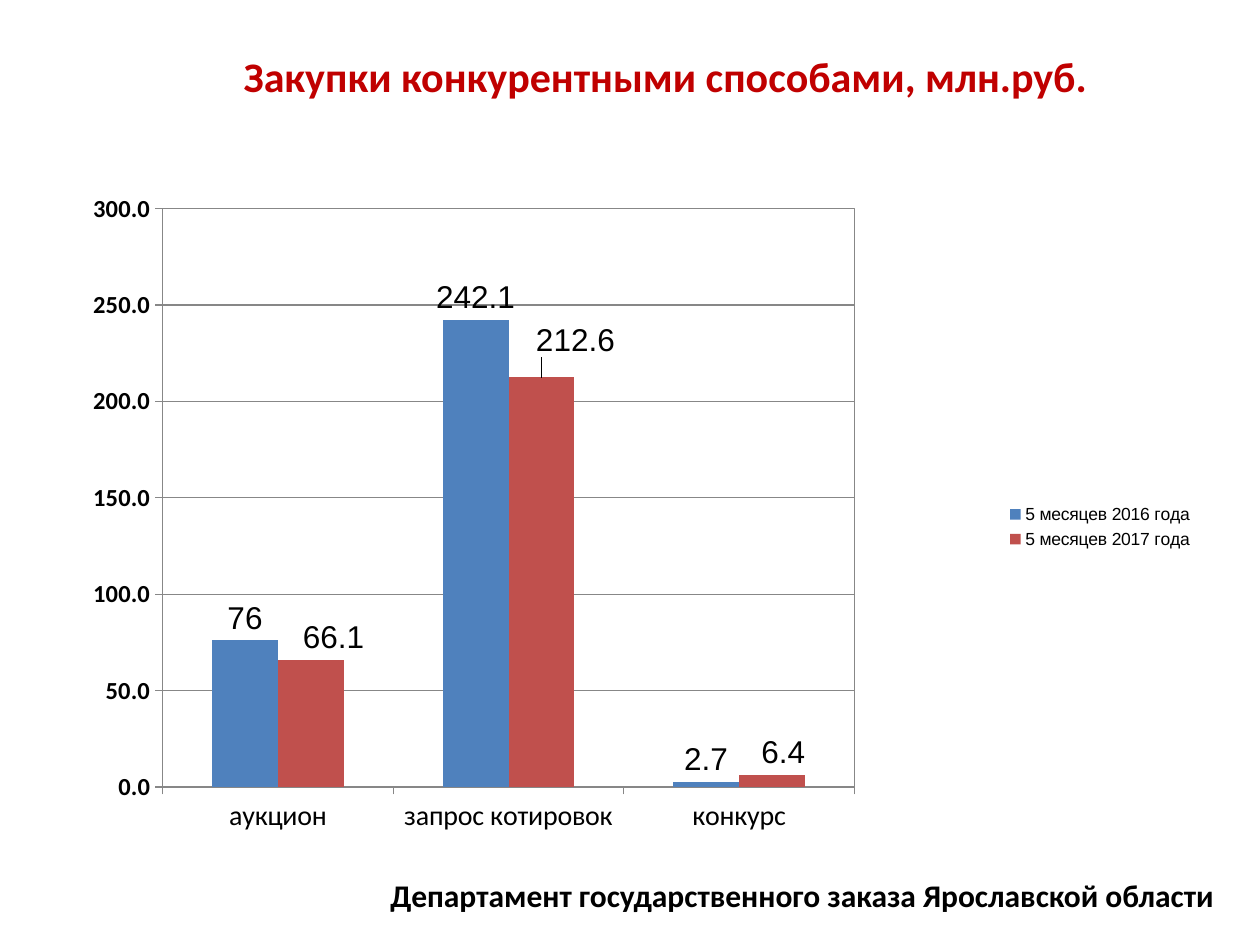
from lxml.etree import SubElement
from pptx import Presentation
from pptx.chart.data import CategoryChartData
from pptx.dml.color import RGBColor
from pptx.enum.chart import XL_CHART_TYPE, XL_LABEL_POSITION, XL_LEGEND_POSITION, XL_TICK_MARK
from pptx.enum.text import MSO_ANCHOR, MSO_AUTO_SIZE, PP_ALIGN
from pptx.oxml import parse_xml
from pptx.oxml.ns import nsdecls, qn
from pptx.util import Cm, Pt

BLACK = RGBColor(0x00, 0x00, 0x00)
DARK_RED = RGBColor(0xC0, 0x00, 0x00)
GRID_GRAY = RGBColor(0x87, 0x87, 0x87)
BLUE = RGBColor(0x4F, 0x81, 0xBD)
BRICK = RGBColor(0xC0, 0x50, 0x4D)

METHODS = ["аукцион", "запрос котировок", "конкурс"]
PERIODS = [
    ("5 месяцев 2016 года", [76, 242.1, 2.7], BLUE),
    ("5 месяцев 2017 года", [66.1, 212.6, 6.4], BRICK),
]
# Shifts of the 2017 labels, as fractions of the chart's width and height
LABEL_SHIFTS = [(0.02, 0), (0.03, -0.02), (0.01, 0)]
PLOT_BOX = {"x": 0.08, "y": 0.06, "w": 0.61, "h": 0.8}


def set_font(font, size, name="Calibri", color=BLACK, bold=False):
    font.size = Pt(size)
    font.name = name
    font.bold = bold
    font.color.rgb = color


def manual_layout(settings):
    layout = parse_xml(f"<c:layout {nsdecls('c')}><c:manualLayout/></c:layout>")
    for tag, value in settings.items():
        SubElement(layout[0], qn(f"c:{tag}")).set("val", str(value))
    return layout


def add_heading(slide, left, top, width, height):
    heading = slide.shapes.title
    heading.left, heading.top, heading.width, heading.height = left, top, width, height
    frame = heading.text_frame
    frame.text = "Закупки конкурентными способами, млн.руб."
    frame.auto_size = MSO_AUTO_SIZE.NONE
    frame.vertical_anchor = MSO_ANCHOR.MIDDLE
    paragraph = frame.paragraphs[0]
    paragraph.alignment = PP_ALIGN.CENTER
    paragraph.line_spacing = Pt(7.8)
    set_font(paragraph.runs[0].font, 24, color=DARK_RED, bold=True)


def frame_plot(chart):
    """Fix the inner plot box and outline it."""
    plot_area = chart._chartSpace.chart.plotArea
    for layout in plot_area.findall(qn("c:layout")):
        plot_area.remove(layout)
    modes = {"layoutTarget": "inner", "xMode": "edge", "yMode": "edge"}
    plot_area.insert(0, manual_layout(modes | PLOT_BOX))
    plot_area.append(parse_xml(
        f'<c:spPr {nsdecls("c", "a")}><a:noFill/><a:ln w="9525"><a:solidFill>'
        f'<a:srgbClr val="{GRID_GRAY}"/></a:solidFill></a:ln></c:spPr>'))


def style_axes(chart):
    for axis, size, bold in ((chart.category_axis, 16, False), (chart.value_axis, 14, True)):
        set_font(axis.tick_labels.font, size, bold=bold)
        axis.major_tick_mark = XL_TICK_MARK.OUTSIDE
        axis.minor_tick_mark = XL_TICK_MARK.NONE
        axis.format.line.color.rgb = GRID_GRAY
        axis.format.line.width = Pt(0.75)
    values = chart.value_axis
    values.minimum_scale, values.maximum_scale, values.major_unit = 0, 300, 50
    values.tick_labels.number_format = "#,##0.0"
    values.tick_labels.number_format_is_linked = False
    values.has_major_gridlines = True
    values.major_gridlines.format.line.color.rgb = GRID_GRAY
    values.major_gridlines.format.line.width = Pt(0.75)


def shift_labels(series):
    for index, (x, y) in enumerate(LABEL_SHIFTS):
        label = series.points[index].data_label
        set_font(label.font, 18, "Arial")
        label.position = XL_LABEL_POSITION.OUTSIDE_END
        label._dLbl.insert(1, manual_layout({"x": x, "y": y}))


def add_purchases_chart(slide, left, top, width, height):
    data = CategoryChartData()
    data.categories = METHODS
    for period, amounts, _ in PERIODS:
        data.add_series(period, amounts)
    chart = slide.shapes.add_chart(
        XL_CHART_TYPE.COLUMN_CLUSTERED, left, top, width, height, data).chart
    set_font(chart.font, 10, "Arial")
    chart.has_title = False
    chart.has_legend = True
    chart.legend.position = XL_LEGEND_POSITION.RIGHT
    chart.legend.include_in_layout = False
    plot = chart.plots[0]
    plot.gap_width = 150
    plot.overlap = 0
    plot.vary_by_categories = False
    for series, (_, _, color) in zip(plot.series, PERIODS):
        series.format.fill.solid()
        series.format.fill.fore_color.rgb = color
        labels = series.data_labels
        labels.show_value = True
        labels.position = XL_LABEL_POSITION.OUTSIDE_END
        set_font(labels.font, 18, "Arial")
    shift_labels(plot.series[1])
    style_axes(chart)
    frame_plot(chart)


def add_department(slide, left, top, width, height):
    frame = slide.shapes.add_textbox(left, top, width, height).text_frame
    frame.word_wrap = True
    frame.text = "Департамент государственного заказа Ярославской области"
    set_font(frame.paragraphs[0].runs[0].font, 18, bold=True)


def main():
    presentation = Presentation()
    presentation.slide_width, presentation.slide_height = Cm(25.4), Cm(19.05)
    slide = presentation.slides.add_slide(presentation.slide_layouts[5])
    add_department(slide, Cm(7.62), Cm(17.53), Cm(17.6), Cm(1.02))
    add_purchases_chart(slide, Cm(1.45), Cm(3.33), Cm(22.86), Cm(14.58))
    add_heading(slide, Cm(2.11), Cm(0.53), Cm(22.61), Cm(2.74))
    presentation.save("out.pptx")


if __name__ == "__main__":
    main()
